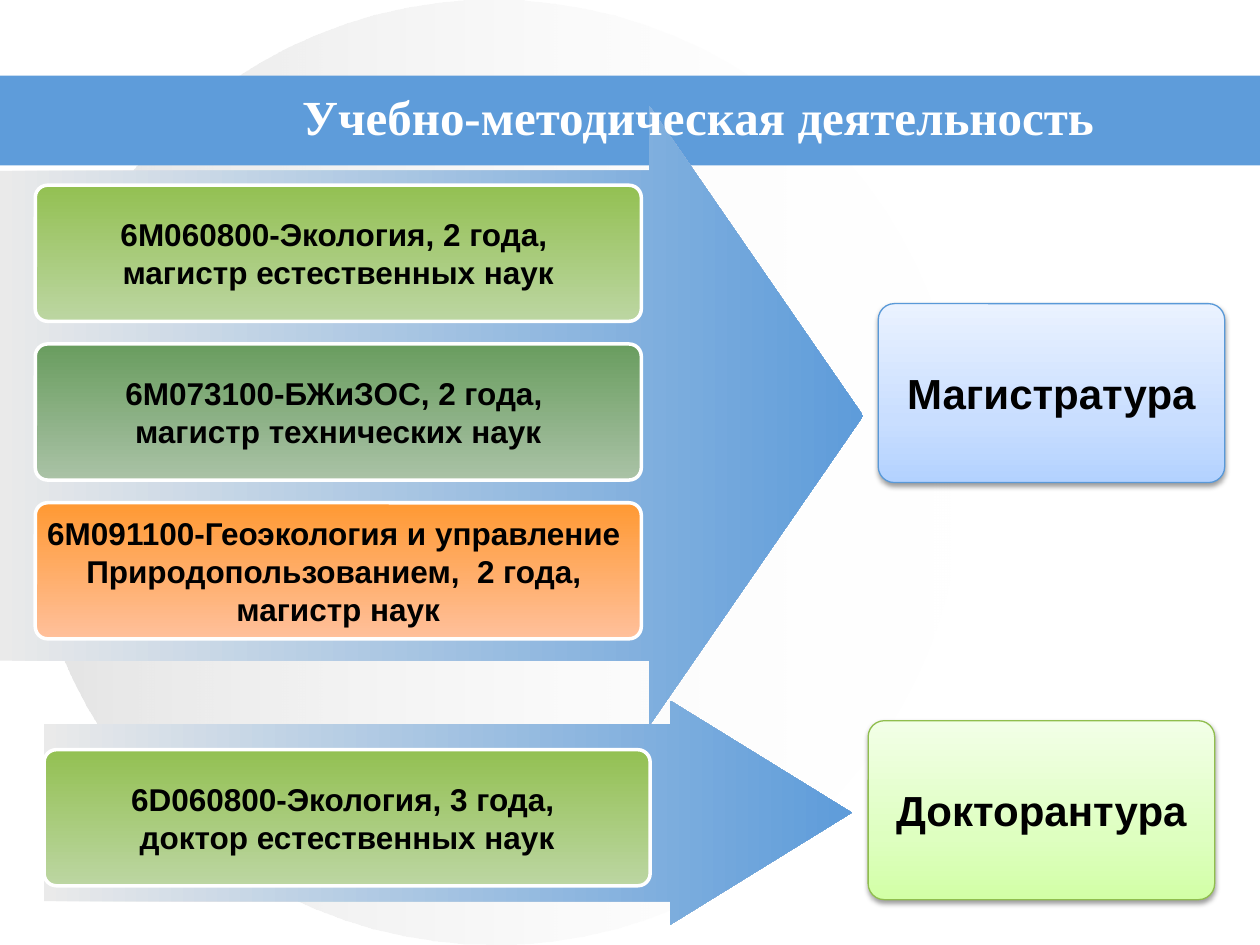
from collections import namedtuple

from lxml.etree import SubElement
from pptx import Presentation
from pptx.dml.color import RGBColor
from pptx.enum.shapes import MSO_SHAPE
from pptx.enum.text import MSO_ANCHOR, PP_ALIGN
from pptx.oxml.ns import qn
from pptx.util import Inches, Pt

Box = namedtuple("Box", "left top width height")

BLACK = RGBColor(0x00, 0x00, 0x00)
WHITE = RGBColor(0xFF, 0xFF, 0xFF)
SILVER = RGBColor(0xC0, 0xC0, 0xC0)
PALE_GRAY = RGBColor(0xEA, 0xEA, 0xEA)
BLUE = RGBColor(0x5E, 0x9C, 0xDA)
BLUE_EDGE = RGBColor(0x59, 0x99, 0xD8)
LIME_EDGE = RGBColor(0x90, 0xBE, 0x4E)

# Gradients: (position in percent, colour)
LIME = [(0, RGBColor(0x93, 0xC0, 0x52)), (100, RGBColor(0xBC, 0xD6, 0xA2))]
GREEN = [(0, RGBColor(0x69, 0x9D, 0x5F)), (100, RGBColor(0xAA, 0xC2, 0xA6))]
ORANGE = [(0, RGBColor(0xFF, 0x99, 0x33)), (100, RGBColor(0xFF, 0xC0, 0x9B))]
ARROW = [(0, PALE_GRAY), (100, BLUE)]
ICE = [(0, RGBColor(0xB3, 0xD2, 0xFF)), (35, RGBColor(0xC9, 0xDE, 0xFF)),
       (100, RGBColor(0xEA, 0xF2, 0xFF))]
MINT = [(0, RGBColor(0xD2, 0xFF, 0xA6)), (35, RGBColor(0xDE, 0xFF, 0xC0)),
        (100, RGBColor(0xF2, 0xFF, 0xE7))]

CARD_WIDTH, CARD_HEIGHT, CARD_PITCH = 4.81, 1.08, 1.26
CORNER = 0.09


def add_color(parent, color, alpha=100):
    node = SubElement(parent, qn("a:srgbClr"), val=str(color))
    if alpha < 100:
        SubElement(node, qn("a:alpha"), val=str(alpha * 1000))


def add_block(page, kind, box, adjustments=()):
    shape = page.shapes.add_shape(kind, *(Inches(length) for length in box))
    for index, value in enumerate(adjustments):
        shape.adjustments[index] = value
    shape.shadow.inherit = False
    shape.line.fill.background()
    return shape


def fill_gradient(shape, stops, angle, alphas=(100, 100, 100)):
    properties = shape.element.spPr
    gradient = SubElement(properties, qn("a:gradFill"), rotWithShape="1")
    stop_list = SubElement(gradient, qn("a:gsLst"))
    for (position, color), alpha in zip(stops, alphas):
        stop = SubElement(stop_list, qn("a:gs"), pos=str(position * 1000))
        add_color(stop, color, alpha)
    SubElement(gradient, qn("a:lin"), ang=str(angle * 60000), scaled="0")
    properties.find(qn("a:prstGeom")).addnext(gradient)


def set_outline(shape, color, width):
    shape.line.color.rgb = color
    shape.line.width = Pt(width)


def write_lines(shape, lines, size, wrap):
    frame = shape.text_frame
    frame.word_wrap = wrap
    frame.vertical_anchor = MSO_ANCHOR.MIDDLE
    for index, line in enumerate(lines):
        para = frame.add_paragraph() if index else frame.paragraphs[0]
        para.text = line
        para.alignment = PP_ALIGN.CENTER
        para.font.name = "Arial"
        para.font.size = Pt(size)
        para.font.bold = True
        para.font.color.rgb = BLACK


def add_backdrop(page, box):
    """Pale disc and the blue title band."""
    disc = add_block(page, MSO_SHAPE.OVAL, Box(
        box.left + 0.02 * box.width, box.top, 0.744 * box.width, box.height))
    fill_gradient(disc, [(0, SILVER), (100, WHITE)], 0, (44, 0))
    band = add_block(page, MSO_SHAPE.RECTANGLE, Box(
        box.left, box.top + 0.08 * box.height, box.width, 0.095 * box.height))
    band.fill.solid()
    band.fill.fore_color.rgb = BLUE


def add_arrow(page, box, head):
    arrow = add_block(page, MSO_SHAPE.RIGHT_ARROW, box, (0.79, head))
    fill_gradient(arrow, ARROW, 0)


def add_programs(page, box, programs):
    """Column of programme cards, starting at the box's top left corner."""
    for row, (stops, lines) in enumerate(programs):
        card = add_block(page, MSO_SHAPE.ROUNDED_RECTANGLE, Box(
            box.left, box.top + row * CARD_PITCH, box.width, CARD_HEIGHT), [CORNER])
        fill_gradient(card, stops, 90)
        set_outline(card, WHITE, 2)
        write_lines(card, lines, 18, False)


def add_degree(page, box, name, stops, edge):
    """Shadowed card with the degree level."""
    card = add_block(page, MSO_SHAPE.ROUNDED_RECTANGLE, box, [CORNER])
    fill_gradient(card, stops, 270)
    set_outline(card, edge, 0.75)
    effects = card.element.spPr.find(qn("a:effectLst"))
    shadow = SubElement(effects, qn("a:outerShdw"), blurRad=str(Pt(3.1)),
                        dist=str(Pt(1.6)), dir="5400000", rotWithShape="0")
    add_color(shadow, BLACK, 38)
    write_lines(card, [name], 24, True)


def add_title(page, box, text):
    title = page.shapes.title
    title.left, title.top, title.width, title.height = (
        Inches(length) for length in box)
    title.text_frame.text = text
    title.text_frame.vertical_anchor = MSO_ANCHOR.BOTTOM
    para = title.text_frame.paragraphs[0]
    para.alignment = PP_ALIGN.CENTER
    para.font.name = "Times New Roman"
    para.font.size = Pt(28)
    para.font.bold = True
    para.font.color.rgb = WHITE
    # Bring the title in front of the band
    title.element.getparent().append(title.element)


def main():
    deck = Presentation()
    deck.slide_width, deck.slide_height = Inches(10), Inches(7.5)
    page = deck.slides.add_slide(deck.slide_layouts[5])
    add_backdrop(page, Box(0, 0, 10, 7.5))

    # Master's programmes
    add_arrow(page, Box(0, 0.84, 6.85, 4.92), 0.345)
    add_programs(page, Box(0.28, 1.47, CARD_WIDTH, 3 * CARD_PITCH), [
        (LIME, ["6M060800-Экология, 2 года, ", "магистр естественных наук"]),
        (GREEN, ["6M073100-БЖиЗОС, 2 года, ", "магистр технических наук"]),
        (ORANGE, ["6M091100-Геоэкология и управление ",
                  "Природопользованием,  2 года, ", "магистр наук"]),
    ])
    add_degree(page, Box(6.97, 2.41, 2.75, 1.42), "Магистратура", ICE, BLUE_EDGE)

    # Doctoral programme
    add_arrow(page, Box(0.35, 5.56, 6.41, 1.78), 0.81)
    add_degree(page, Box(6.89, 5.72, 2.75, 1.42), "Докторантура", MINT, LIME_EDGE)
    add_programs(page, Box(0.35, 5.95, CARD_WIDTH, CARD_PITCH), [
        (LIME, ["6D060800-Экология, 3 года, ", "доктор естественных наук"]),
    ])

    add_title(page, Box(2.25, 0.29, 6.58, 0.91), "Учебно-методическая деятельность")
    deck.save("out.pptx")


if __name__ == "__main__":
    main()
